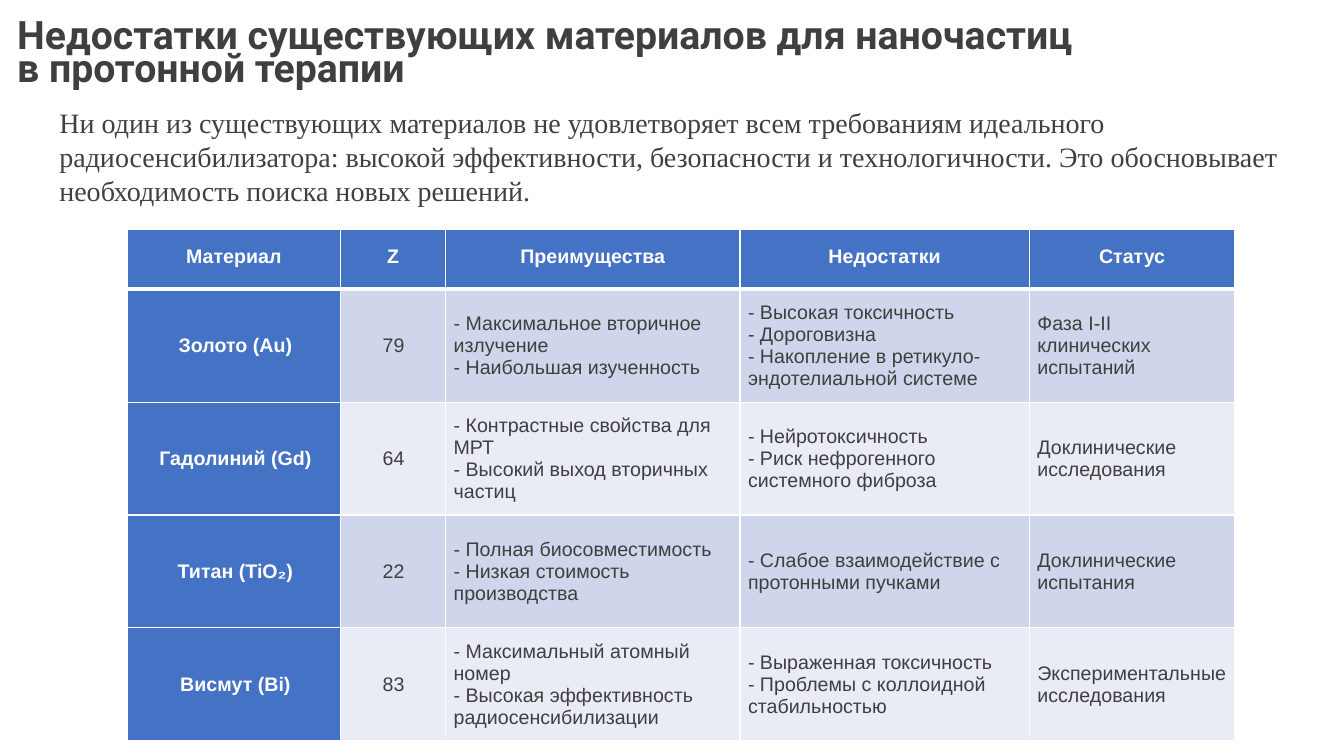
from dataclasses import dataclass

from lxml.etree import SubElement
from pptx import Presentation
from pptx.dml.color import RGBColor
from pptx.enum.text import MSO_ANCHOR as Anchor, MSO_AUTO_SIZE as AutoSize, PP_ALIGN as Align
from pptx.oxml.ns import qn
from pptx.util import Inches, Pt

TITLE = "Недостатки существующих материалов для наночастиц в протонной терапии"
SUMMARY = (
    "Ни один из существующих материалов не удовлетворяет всем требованиям идеального "
    "радиосенсибилизатора: высокой эффективности, безопасности и технологичности. "
    "Это обосновывает необходимость поиска новых решений."
)
HEADER = ["Материал", "Z", "Преимущества", "Недостатки", "Статус"]
MATERIALS = [
    ["Золото (Au)", "79",
     "- Максимальное вторичное излучение\n- Наибольшая изученность",
     "- Высокая токсичность\n- Дороговизна\n- Накопление в ретикуло-эндотелиальной системе",
     "Фаза I-II клинических испытаний"],
    ["Гадолиний (Gd)", "64",
     "- Контрастные свойства для МРТ\n- Высокий выход вторичных частиц",
     "- Нейротоксичность\n- Риск нефрогенного системного фиброза",
     "Доклинические исследования"],
    ["Титан (TiO₂)", "22",
     "- Полная биосовместимость\n- Низкая стоимость производства",
     "- Слабое взаимодействие с протонными пучками",
     "Доклинические испытания"],
    ["Висмут (Bi)", "83",
     "- Максимальный атомный номер\n- Высокая эффективность радиосенсибилизации",
     "- Выраженная токсичность\n- Проблемы с коллоидной стабильностью",
     "Экспериментальные исследования"],
]

SLIDE = (13.33, 7.5)
TITLE_BOX = (0.07, 0, 10.69, 0.9)
SUMMARY_BOX = (0.49, 1, 12.53, 1.11)
TABLE_AT = (1.26, 2.28)
COLUMNS = [2.12, 1.04, 2.92, 2.87, 2.04]
HEADER_HEIGHT, ROW_HEIGHT = 0.59, 1.12


@dataclass(frozen=True)
class Theme:
    ink: str = "3F3F3F"
    summary_ink: str = "404040"
    white: str = "FFFFFF"
    accent: str = "4472C4"
    bands: tuple = ("CFD5EA", "E9EBF5")
    title_font: str = "Roboto"
    summary_font: str = "Times New Roman"
    table_font: str = "Arial"
    title_size: float = 28
    summary_size: float = 20
    table_size: float = 14


THEME = Theme()


def write(tf, text, font, size, color, bold=False, align=Align.LEFT, spacing=1.0):
    """Fill a text frame, one paragraph per line of text."""
    tf.word_wrap = True
    for i, line in enumerate(text.split("\n")):
        p = tf.paragraphs[0] if i == 0 else tf.add_paragraph()
        p.alignment, p.line_spacing = align, spacing
        p.space_before = Pt(0)
        r = p.add_run()
        r.text = line
        r.font.name, r.font.size, r.font.bold = font, Pt(size), bold
        r.font.color.rgb = RGBColor.from_string(color)


def set_insets(target, left, top, right, bottom):
    target.margin_left, target.margin_top = Inches(left), Inches(top)
    target.margin_right, target.margin_bottom = Inches(right), Inches(bottom)


def set_borders(cell, bottom=1):
    """Draw white cell borders; must run before the cell gets its fill."""
    tc_pr = cell._tc.get_or_add_tcPr()
    for side, width in {"L": 1, "R": 1, "T": 1, "B": bottom}.items():
        ln = SubElement(tc_pr, qn(f"a:ln{side}"), w=str(Pt(width)))
        SubElement(SubElement(ln, qn("a:solidFill")), qn("a:srgbClr"), val=THEME.white)


def add_title(slide):
    sp = slide.shapes.title
    sp.left, sp.top, sp.width, sp.height = map(Inches, TITLE_BOX)
    tf = sp.text_frame
    tf.auto_size, tf.vertical_anchor = AutoSize.NONE, Anchor.TOP
    set_insets(tf, 0.1, 0.23, 0.1, 0)
    write(tf, TITLE, THEME.title_font, THEME.title_size, THEME.ink, bold=True, spacing=0.7)


def add_materials_table(slide):
    rows = [HEADER] + MATERIALS
    heights = [HEADER_HEIGHT] + [ROW_HEIGHT] * len(MATERIALS)
    table = slide.shapes.add_table(
        len(rows), len(COLUMNS), *map(Inches, (*TABLE_AT, sum(COLUMNS), sum(heights)))).table
    table.first_col = True
    for column, width in zip(table.columns, COLUMNS):
        column.width = Inches(width)
    for i, (row, height) in enumerate(zip(rows, heights)):
        table.rows[i].height = Inches(height)
        for j, text in enumerate(row):
            cell = table.cell(i, j)
            is_header = i == 0
            is_accent = is_header or j == 0
            set_borders(cell, bottom=3 if is_header else 1)
            cell.fill.solid()
            cell.fill.fore_color.rgb = RGBColor.from_string(
                THEME.accent if is_accent else THEME.bands[(i - 1) % 2])
            if not is_header:
                cell.vertical_anchor = Anchor.MIDDLE
                set_insets(cell, 0.1 if j == 0 else 0.08, 0.08, 0.07, 0.08)
            write(cell.text_frame, text, THEME.table_font, THEME.table_size,
                  THEME.white if is_accent else THEME.ink, bold=is_accent,
                  align=Align.CENTER if is_header or j < 2 else Align.LEFT,
                  spacing=1.5 if is_header else 1.0)


def add_summary(slide):
    tf = slide.shapes.add_textbox(*map(Inches, SUMMARY_BOX)).text_frame
    tf.auto_size = AutoSize.SHAPE_TO_FIT_TEXT
    write(tf, SUMMARY, THEME.summary_font, THEME.summary_size, THEME.summary_ink)


def main():
    prs = Presentation()
    prs.slide_width, prs.slide_height = map(Inches, SLIDE)
    slide = prs.slides.add_slide(prs.slide_layouts.get_by_name("Title Only"))
    add_title(slide)
    add_materials_table(slide)
    add_summary(slide)
    prs.save("out.pptx")


if __name__ == "__main__":
    main()
